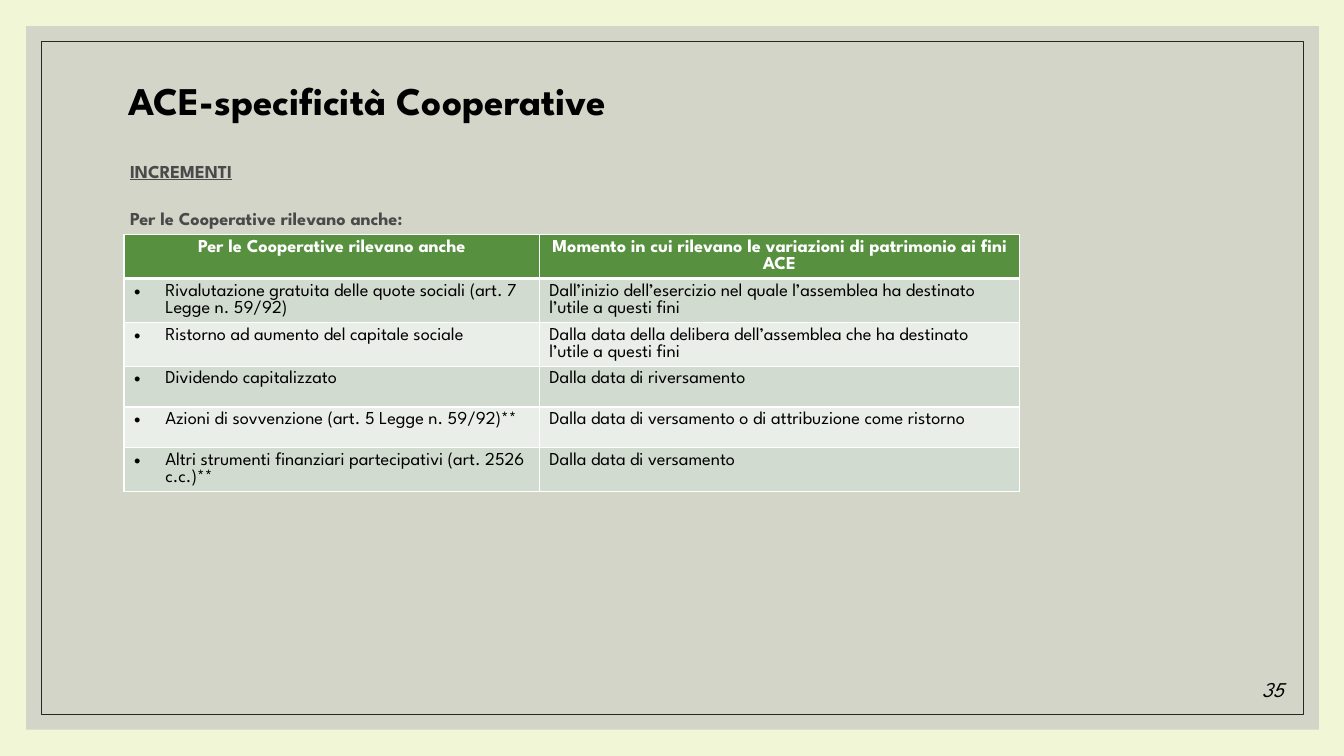
from lxml.etree import SubElement as Sub
from pptx import Presentation
from pptx.dml.color import RGBColor
from pptx.enum.shapes import MSO_SHAPE as Shape
from pptx.enum.text import MSO_ANCHOR as Anchor, MSO_AUTO_SIZE as Fit, PP_ALIGN as Align
from pptx.oxml.ns import qn
from pptx.util import Inches, Pt

FONT = "League Spartan"
HEAD = ["Per le Cooperative rilevano anche",
        "Momento in cui rilevano le variazioni di patrimonio ai fini ACE"]
ROWS = [
    ["Rivalutazione gratuita delle quote sociali (art. 7 Legge n. 59/92)",
     "Dall’inizio dell’esercizio nel quale l’assemblea ha destinato l’utile a questi fini"],
    ["Ristorno ad aumento del capitale sociale",
     "Dalla data della delibera dell’assemblea che ha destinato l’utile a questi fini"],
    ["Dividendo capitalizzato", "Dalla data di riversamento"],
    ["Azioni di sovvenzione (art. 5 Legge n. 59/92)**",
     "Dalla data di versamento o di attribuzione come ristorno"],
    ["Altri strumenti finanziari partecipativi (art. 2526 c.c.)**",
     "Dalla data di versamento"],
]


def paint(color, tone):
    color.rgb = RGBColor.from_string(tone)


def style(para, size, tone, bold=False, align=Align.LEFT):
    font = para.font
    font.name, font.size, font.bold = FONT, Pt(size), bold
    paint(font.color, tone)
    para.alignment = align


def space(para, line, before, after):
    para.line_spacing = line
    para.space_before, para.space_after = Pt(before), Pt(after)


def place(shape, box):
    shape.left, shape.top, shape.width, shape.height = map(Inches, box)
    frame = shape.text_frame
    frame.word_wrap, frame.auto_size = True, Fit.NONE
    frame.vertical_anchor = Anchor.TOP
    return frame


def add_frame(slide, box, gap):
    x, y, w, h = box
    outer = slide.shapes.add_shape(Shape.RECTANGLE, *map(Inches, box))
    inner = slide.shapes.add_shape(
        Shape.RECTANGLE, *map(Inches, (x + gap, y + gap, w - 2 * gap, h - 2 * gap)))
    outer.fill.solid()
    paint(outer.fill.fore_color, "BFBFBF")
    tone = outer.element.spPr.find(".//" + qn("a:srgbClr"))
    Sub(tone, qn("a:alpha"), val="60000")
    outer.line.fill.background()
    inner.fill.background()
    paint(inner.line.color, "262626")
    inner.line.width = Pt(0.5)
    for spot, part in enumerate((outer, inner), 2):
        part.shadow.inherit = False
        part.element.getparent().insert(spot, part.element)


def add_title(slide, box):
    frame = place(slide.shapes.title, box)
    frame.text = "ACE-specificità Cooperative"
    para = frame.paragraphs[0]
    style(para, 28, "000000", True, Align.JUSTIFY)
    space(para, Pt(18), 0, 8)


def add_intro(slide, box):
    frame = place(slide.placeholders[1], box)
    frame.text = "INCREMENTI\nPer le Cooperative rilevano anche:"
    for para in frame.paragraphs:
        style(para, 13, "4A4A4A", True, Align.JUSTIFY)
        space(para, Pt(22.5), 9, 2.2)
        indent(para, 0)
    frame.paragraphs[0].font.underline = True


def indent(para, size, mark=None):
    props = para._p.get_or_add_pPr()
    props.set("marL", str(Inches(size)))
    props.set("indent", str(-Inches(size)))
    if mark:
        Sub(props, qn("a:buFont"), typeface="Arial")
        Sub(props, qn("a:buChar"), char=mark)
    else:
        Sub(props, qn("a:buNone"))
    for run in props.findall(qn("a:defRPr")):
        props.append(run)


def edge(cell, base):
    props = cell._tc.get_or_add_tcPr()
    for side in "LRTB":
        width = base if side == "B" else 1
        line = Sub(props, qn("a:ln" + side), w=str(Pt(width)))
        fill = Sub(line, qn("a:solidFill"))
        Sub(fill, qn("a:srgbClr"), val="FFFFFF")


def add_grid(slide, box, cols):
    data = [HEAD] + ROWS
    table = slide.shapes.add_table(len(data), len(cols), *map(Inches, box)).table
    for col, width in zip(table.columns, cols):
        col.width = Inches(width)
    for r, row in enumerate(data):
        for c, text in enumerate(row):
            cell = table.cell(r, c)
            cell.text = text
            para = cell.text_frame.paragraphs[0]
            edge(cell, 1 if r else 3)
            cell.fill.solid()
            if r:
                style(para, 13, "000000")
                paint(cell.fill.fore_color, "D1DBCF" if r % 2 else "EAEEE8")
                if c == 0:
                    indent(para, 0.31, "•")
            else:
                style(para, 13, "FFFFFF", True, Align.CENTER)
                paint(cell.fill.fore_color, "57903F")


def add_page(slide, box):
    frame = place(slide.shapes.add_textbox(*map(Inches, box)), box)
    frame.text = "35"
    para = frame.paragraphs[0]
    style(para, 15, "000000", align=Align.RIGHT)
    space(para, 1.1, 9, 6)
    para.font.italic = True


def main():
    deck = Presentation()
    deck.slide_width, deck.slide_height = Inches(13.33), Inches(7.5)
    slide = deck.slides.add_slide(deck.slide_layouts[1])
    slide.background.fill.solid()
    paint(slide.background.fill.fore_color, "F1F6D6")
    add_frame(slide, (0.26, 0.26, 12.82, 6.98), 0.15)
    add_title(slide, (1.17, 0.92, 11, 1.5))
    add_grid(slide, (1.23, 2.33, 8.88, 2.43), (4.12, 4.76))
    add_intro(slide, (1.19, 1.44, 10.16, 0.38))
    add_page(slide, (4.28, 6.64, 8.55, 0.61))
    deck.save("out.pptx")


if __name__ == "__main__":
    main()
